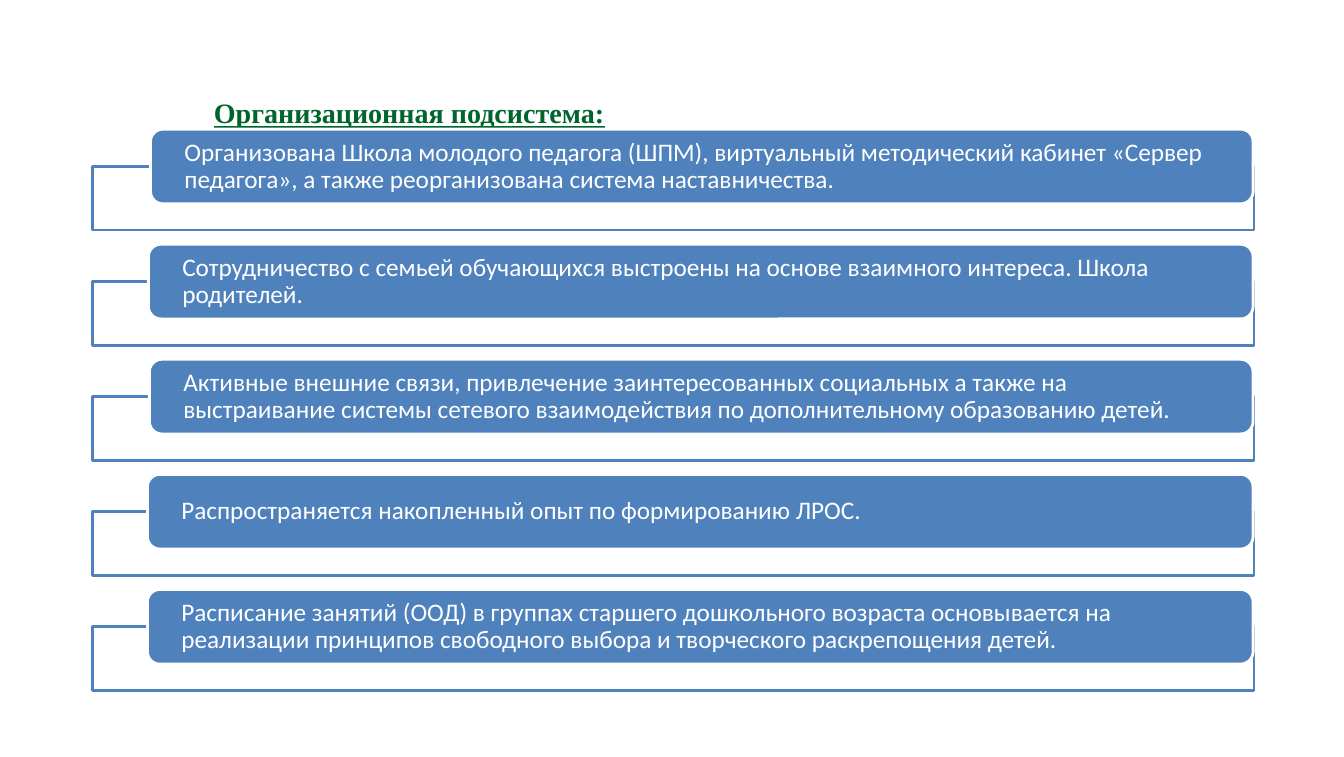
from lxml.etree import SubElement
from pptx import Presentation
from pptx.dml.color import RGBColor
from pptx.enum.shapes import MSO_SHAPE
from pptx.enum.text import MSO_ANCHOR, PP_ALIGN
from pptx.oxml.ns import qn
from pptx.util import Inches, Pt

BLUE = RGBColor(0x4F, 0x81, 0xBD)
GREEN = RGBColor(0x00, 0x64, 0x2D)
WHITE = RGBColor(0xFF, 0xFF, 0xFF)

TITLE = "Организационная подсистема:"
# Indent of each bar from the frame, and its text
ITEMS = [
    (0.57, "Организована Школа молодого педагога (ШПМ), виртуальный методический "
           "кабинет «Сервер педагога», а также реорганизована система наставничества."),
    (0.55, "Сотрудничество с семьей обучающихся выстроены на основе взаимного "
           "интереса. Школа родителей."),
    (0.56, "Активные внешние связи, привлечение заинтересованных социальных а также на "
           "выстраивание системы сетевого взаимодействия по дополнительному "
           "образованию детей."),
    (0.54, "Распространяется накопленный опыт по формированию ЛРОС."),
    (0.54, "Расписание занятий (ООД) в группах старшего дошкольного возраста "
           "основывается на реализации принципов свободного выбора и творческого "
           "раскрепощения детей."),
]
STEP = 1.14
BAR_H = 0.74
FRAME_H = 0.63
DROP = 0.37  # from the top of a bar to the top of its frame


def add_title(slide, left, top, width, height):
    box = slide.shapes.add_textbox(Inches(left), Inches(top), Inches(width), Inches(height))
    frame = box.text_frame
    frame.word_wrap = True
    frame.margin_top = Inches(0.35)
    frame.text = TITLE
    font = frame.paragraphs[0].runs[0].font
    font.name, font.size = "Times New Roman", Pt(20)
    font.bold = font.underline = True
    font.color.rgb = GREEN


def add_box(slide, kind, area, fill, line):
    shape = slide.shapes.add_shape(kind, *(Inches(n) for n in area))
    shape.shadow.inherit = False
    shape.fill.solid()
    shape.fill.fore_color.rgb = fill
    shape.line.color.rgb = line
    shape.line.width = Pt(2)
    return shape


def add_item(slide, left, top, width, indent, text):
    # Outlined frame behind, slightly see-through
    back = add_box(slide, MSO_SHAPE.RECTANGLE, (left, top + DROP, width, FRAME_H), WHITE, BLUE)
    color = back.fill._xPr.find(qn("a:solidFill"))[0]
    SubElement(color, qn("a:alpha"), val="90000")

    # Rounded bar with the text
    area = (left + indent, top, width - indent - 0.01, BAR_H)
    bar = add_box(slide, MSO_SHAPE.ROUNDED_RECTANGLE, area, BLUE, WHITE)
    frame = bar.text_frame
    frame.word_wrap = True
    frame.vertical_anchor = MSO_ANCHOR.MIDDLE
    frame.margin_left = frame.margin_right = Inches(0.3)
    frame.margin_top = frame.margin_bottom = 0
    frame.text = text
    para = frame.paragraphs[0]
    para.alignment = PP_ALIGN.LEFT
    para.line_spacing = 0.9
    font = para.runs[0].font
    font.name, font.size = "Calibri", Pt(18)
    font.color.rgb = WHITE


def add_list(slide, left, top, width):
    for row, (indent, text) in enumerate(ITEMS):
        add_item(slide, left, top + row * STEP, width, indent, text)


def main():
    deck = Presentation()
    deck.slide_width, deck.slide_height = Inches(13.31), Inches(7.5)
    slide = deck.slides.add_slide(deck.slide_layouts[6])
    add_title(slide, 2.02, 0.6, 10.39, 1.04)
    add_list(slide, 0.92, 1.28, 11.5)
    deck.save("out.pptx")


if __name__ == "__main__":
    main()
